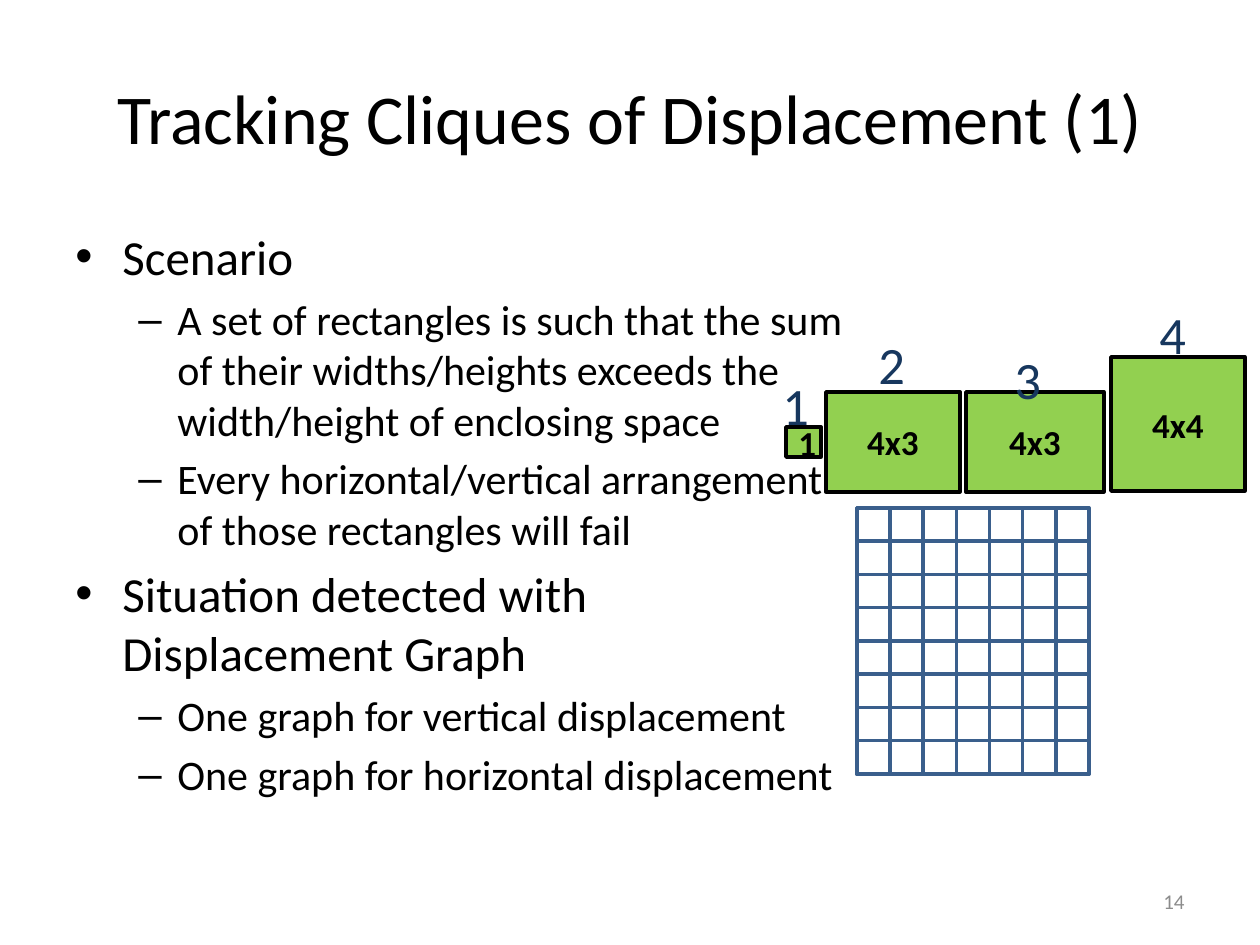
from dataclasses import dataclass
from itertools import product

from lxml import etree
from pptx import Presentation
from pptx.dml.color import RGBColor
from pptx.enum.shapes import MSO_SHAPE
from pptx.enum.text import MSO_ANCHOR, PP_ALIGN
from pptx.oxml.ns import qn
from pptx.util import Emu, Pt

RECT = MSO_SHAPE.RECTANGLE
TOP, MIDDLE = MSO_ANCHOR.TOP, MSO_ANCHOR.MIDDLE
LEFT, CENTER, RIGHT = PP_ALIGN.LEFT, PP_ALIGN.CENTER, PP_ALIGN.RIGHT
SCALE = 914400 / 126


@dataclass(frozen=True)
class Theme:
    font: str = "Calibri"
    black: str = "000000"
    green: str = "92D050"
    blue: str = "3A5F8C"
    navy: str = "17375E"
    gray: str = "8C8C8C"
    title: int = 40
    point: int = 28
    detail: int = 24
    label: int = 30
    block: int = 20
    page: int = 12
    stroke: int = 2


THEME = Theme()
LEVELS = (
    ("•", 47, -47, THEME.point),
    ("–", 102, -39, THEME.detail),
)
POINTS = (
    (0, "Scenario"),
    (1, "A set of rectangles is such that the sum of their widths/heights "
        "exceeds the width/height of enclosing space"),
    (1, "Every horizontal/vertical arrangement of those rectangles will fail"),
    (0, "Situation detected with Displacement Graph"),
    (1, "One graph for vertical displacement"),
    (1, "One graph for horizontal displacement"),
)
BLOCKS = (
    ("4x4", (1111, 357, 134, 134)),
    ("4x3", (826, 392, 134, 100)),
    ("4x3", (966, 392, 138, 100)),
)
LABELS = (
    ("1", (770, 367, 53, 67)),
    ("2", (866, 326, 53, 72)),
    ("3", (1002, 341, 53, 67)),
)
UNIT = ("1", (786, 427, 35, 30))
LAST = ("4", (1147, 296, 53, 67))
GRID_LEFT, GRID_TOP = 857, 508
COLS, ROWS = 7, 8
GRID_WIDTH, GRID_HEIGHT = 232, 266


def px(count):
    return Emu(round(count * SCALE))


def place(box):
    return [px(side) for side in box]


def add_run(para, text, size, color, bold=False):
    run = para.add_run()
    run.text = text
    font = run.font
    font.name = THEME.font
    font.size = Pt(size)
    font.bold = bold
    font.color.rgb = RGBColor.from_string(color)


def set_indent(para, left, first, mark=None):
    props = para._p.get_or_add_pPr()
    props.set("marL", str(px(left)))
    props.set("indent", str(px(first)))
    if mark:
        etree.SubElement(props, qn("a:buFont")).set("typeface", "Arial")
        etree.SubElement(props, qn("a:buChar")).set("char", mark)


def add_frame(shapes, box, anchor=TOP):
    frame = shapes.add_textbox(*place(box)).text_frame
    frame.word_wrap = True
    frame.vertical_anchor = anchor
    return frame


def add_line(shapes, box, text, size, color, align):
    para = add_frame(shapes, box, MIDDLE).paragraphs[0]
    para.alignment = align
    add_run(para, text, size, color)


def add_points(shapes, box):
    frame = add_frame(shapes, box)
    for index, (level, text) in enumerate(POINTS):
        para = frame.add_paragraph() if index else frame.paragraphs[0]
        mark, left, first, size = LEVELS[level]
        para.level = level
        para.alignment = LEFT
        para.space_before = Pt(size * 0.2)
        set_indent(para, left, first, mark)
        add_run(para, text, size, THEME.black)


def add_rect(shapes, box, line, fill=None):
    rect = shapes.add_shape(RECT, *place(box))
    rect.shadow.inherit = False
    rect.line.color.rgb = RGBColor.from_string(line)
    rect.line.width = Pt(THEME.stroke)
    if fill:
        rect.fill.solid()
        rect.fill.fore_color.rgb = RGBColor.from_string(fill)
    else:
        rect.fill.background()
    return rect


def add_grid(shapes):
    add_rect(shapes, (GRID_LEFT, GRID_TOP, GRID_WIDTH, GRID_HEIGHT), THEME.blue)
    wide, high = GRID_WIDTH / COLS, GRID_HEIGHT / ROWS
    for col, row in product(range(COLS), range(ROWS)):
        box = (GRID_LEFT + col * wide, GRID_TOP + row * high, wide, high)
        add_rect(shapes, box, THEME.blue)


def add_block(shapes, text, box):
    frame = add_rect(shapes, box, THEME.black, THEME.green).text_frame
    frame.word_wrap = True
    frame.vertical_anchor = MIDDLE
    para = frame.paragraphs[0]
    para.alignment = CENTER
    add_run(para, text, THEME.block, THEME.black, True)


def add_label(shapes, text, box):
    para = add_frame(shapes, box).paragraphs[0]
    para.space_before = Pt(THEME.label * 0.2)
    set_indent(para, 47, -47)
    add_run(para, text, THEME.label, THEME.navy)


def main():
    deck = Presentation()
    deck.slide_width, deck.slide_height = px(1260), px(945)
    shapes = deck.slides.add_slide(deck.slide_layouts[6]).shapes
    add_line(shapes, (63, 38, 1134, 157), "Tracking Cliques of Displacement (1)",
             THEME.title, THEME.black, CENTER)
    add_points(shapes, (63, 220, 814, 669))
    add_grid(shapes.add_group_shape().shapes)
    group = shapes.add_group_shape().shapes
    for text, box in BLOCKS:
        add_block(group, text, box)
    for text, box in LABELS:
        add_label(group, text, box)
    add_block(group, *UNIT)
    add_label(group, *LAST)
    add_line(shapes, (903, 876, 294, 50), "14", THEME.page, THEME.gray, RIGHT)
    deck.save("out.pptx")


if __name__ == "__main__":
    main()
